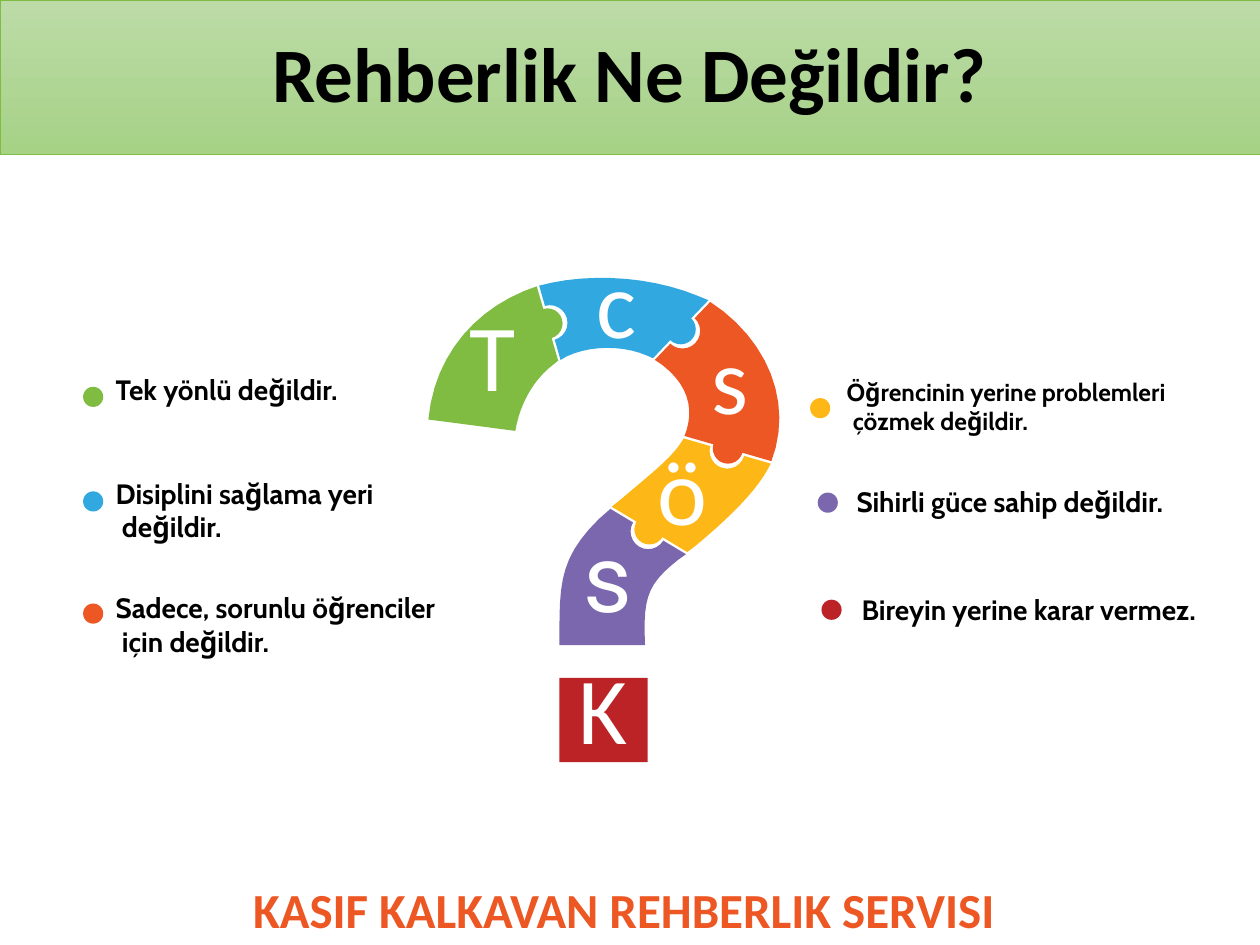
"""Build a slide on what guidance is not, around a puzzle question mark."""
import math
from pptx import Presentation
from pptx import util as u
from pptx.dml.color import RGBColor
from pptx.enum import shapes, text

COLORS = {
    "green": "7FBC41", "blue": "31A8DF", "orange": "EC5724", "yellow": "FDB817",
    "purple": "7B67AD", "red": "BB2326", "black": "000000", "white": "FFFFFF",
    "band_top": "BCDBA7", "band_bottom": "A6D286",
}
COLUMNS = 10
STEPS = 12
KNOB_RADIUS = 0.13
HALF_GAP = 0.01
BULLET = 0.16

PIECES = ["green", "blue", "orange", "yellow", "purple"]
OUTER_JOINTS = [(3.4, 3.33), (4.27, 2.27), (5.63, 2.39), (6.12, 3.67), (5.45, 4.39), (5.12, 5.12)]
INNER_JOINTS = [(4.09, 3.42), (4.44, 2.86), (5.19, 2.85), (5.43, 3.47), (4.85, 4.03), (4.44, 5.12)]
OUTER_HANDLES = [
    ((3.45, 2.8), (3.8, 2.42)), ((4.7, 2.15), (5.25, 2.2)), ((6.1, 2.7), (6.3, 3.2)),
    ((6.03, 3.88), (5.77, 4.13)), ((5.15, 4.62), (5.1, 4.7)),
]
INNER_HANDLES = [
    ((4.13, 3.19), (4.25, 2.98)), ((4.65, 2.73), (4.98, 2.73)), ((5.47, 3.03), (5.52, 3.25)),
    ((5.35, 3.63), (5.15, 3.77)), ((4.43, 4.4), (4.44, 4.6)),
]
BULLETS = [
    ("green", 0.66, 3.07), ("blue", 0.66, 3.9), ("orange", 0.66, 4.79),
    ("yellow", 6.43, 3.16), ("purple", 6.49, 3.91), ("red", 6.52, 4.76),
]
STATEMENTS = [
    (0.82, 2.91, 2.19, 16, "Tek yönlü değildir."),
    (0.82, 3.73, 2.47, 16, "Disiplini sağlama yeri\ndeğildir."),
    (0.82, 4.64, 3.03, 16, "Sadece, sorunlu öğrenciler\niçin değildir."),
    (6.62, 2.94, 3.01, 14, "Öğrencinin yerine problemleri\nçözmek değildir."),
    (6.7, 3.8, 2.94, 16, "Sihirli güce sahip değildir."),
    (6.74, 4.65, 3.21, 16, "Bireyin yerine karar vermez."),
]
LETTERS = [
    ("T", 3.72, 2.62, "Calibri"), ("c", 4.7, 2.2, "Calibri"),
    ("s", 5.6, 2.8, "Calibri"), ("ö", 5.22, 3.68, "Calibri"),
    ("s", 4.63, 4.37, "Roboto"), ("K", 4.59, 5.42, "Calibri"),
]

presentation = Presentation()
presentation.slide_width, presentation.slide_height = u.Inches(10), u.Inches(7.5)
column = presentation.slide_width / COLUMNS
slide = presentation.slides.add_slide(presentation.slide_layouts[5])


def cells(*lengths):
    return [round(length * column) for length in lengths]


def write(frame, words, size, font, color, bold, alignment):
    frame.text = words
    for paragraph in frame.paragraphs:
        paragraph.alignment = alignment
        for run in paragraph.runs:
            run.font.size, run.font.name, run.font.bold = u.Pt(size), font, bold
            run.font.color.rgb = RGBColor.from_string(COLORS[color])


title = slide.shapes.title
title.left, title.top, title.width, title.height = cells(0, 0, COLUMNS, 1.23)
title.fill.gradient()
title.fill.gradient_angle = 270
for stop, color in zip(title.fill.gradient_stops, ("band_top", "band_bottom")):
    stop.color.rgb = RGBColor.from_string(COLORS[color])
title.line.color.rgb = RGBColor.from_string(COLORS["green"])
title.line.width = u.Pt(0.5)
write(title.text_frame, "Rehberlik Ne Değildir?", 44, "Calibri", "black", True,
      text.PP_ALIGN.CENTER)
title.text_frame.vertical_anchor = text.MSO_ANCHOR.MIDDLE
title.text_frame.paragraphs[0].line_spacing = 0.9

joints = []
for index, (outer, inner) in enumerate(zip(OUTER_JOINTS, INNER_JOINTS)):
    is_end = index in (0, len(PIECES))
    length = math.dist(outer, inner)
    along_x, along_y = [(b - a) / length for a, b in zip(outer, inner)]
    sides = {}
    for side in (-1, 1):
        gap = 0 if is_end else side * HALF_GAP
        radius = 0 if is_end else KNOB_RADIUS + gap
        offsets = [(-length / 2, gap)]
        for step in range(STEPS + 1):
            angle = math.pi * step / STEPS
            offsets.append((-radius * math.cos(angle), gap + radius * math.sin(angle)))
        offsets.append((length / 2, gap))
        sides[side] = [
            ((outer[0] + inner[0]) / 2 + along * along_x + across * along_y,
             (outer[1] + inner[1]) / 2 + along * along_y - across * along_x)
            for along, across in offsets]
    joints.append(sides)

solids = []
for index, color in enumerate(PIECES):
    edges = []
    for ends, handles in ((OUTER_JOINTS, OUTER_HANDLES), (INNER_JOINTS, INNER_HANDLES)):
        knots = [ends[index], *handles[index], ends[index + 1]]
        edge = []
        for step in range(1, STEPS):
            t = step / STEPS
            weights = [math.comb(3, k) * t ** k * (1 - t) ** (3 - k) for k in range(4)]
            edge.append([sum(w * knot[axis] for w, knot in zip(weights, knots))
                         for axis in (0, 1)])
        edges.append(edge)
    outline = edges[0] + joints[index + 1][-1] + edges[1][::-1] + joints[index][1][::-1]
    builder = slide.shapes.build_freeform(*cells(*outline[0]))
    builder.add_line_segments([cells(*point) for point in outline[1:]], close=True)
    solids.append((builder.convert_to_shape(), color))

dot = slide.shapes.add_shape(shapes.MSO_SHAPE.RECTANGLE, *cells(4.44, 5.38, 0.7, 0.67))
solids.append((dot, "red"))
for color, left, top in BULLETS:
    bullet = slide.shapes.add_shape(shapes.MSO_SHAPE.OVAL, *cells(left, top, BULLET, BULLET))
    solids.append((bullet, color))
for shape, color in solids:
    shape.shadow.inherit = False
    shape.fill.solid()
    shape.fill.fore_color.rgb = RGBColor.from_string(COLORS[color])
    shape.line.fill.background()

for left, top, width, size, words in STATEMENTS:
    line_count = len(words.splitlines())
    height = 0.1 + line_count * size / 60
    frame = slide.shapes.add_textbox(*cells(left, top, width, height)).text_frame
    write(frame, words, size, "Cabin", "black", True, text.PP_ALIGN.LEFT)
    for paragraph in frame.paragraphs[1:]:
        paragraph._p.get_or_add_pPr().set("marL", str(u.Inches(0.05)))

for letter, left, top, font in LETTERS:
    frame = slide.shapes.add_textbox(*cells(left, top, 0.38, 0.38)).text_frame
    frame.margin_left = frame.margin_right = frame.margin_top = frame.margin_bottom = 0
    frame.vertical_anchor = text.MSO_ANCHOR.MIDDLE
    write(frame, letter, 54, font, "white", False, text.PP_ALIGN.CENTER)

footer = slide.shapes.add_textbox(*cells(1.87, 6.93, 6.16, 0.57))
write(footer.text_frame, "KASIF KALKAVAN REHBERLIK SERVISI", 28, "Calibri", "orange",
      True, text.PP_ALIGN.CENTER)

presentation.save("out.pptx")
